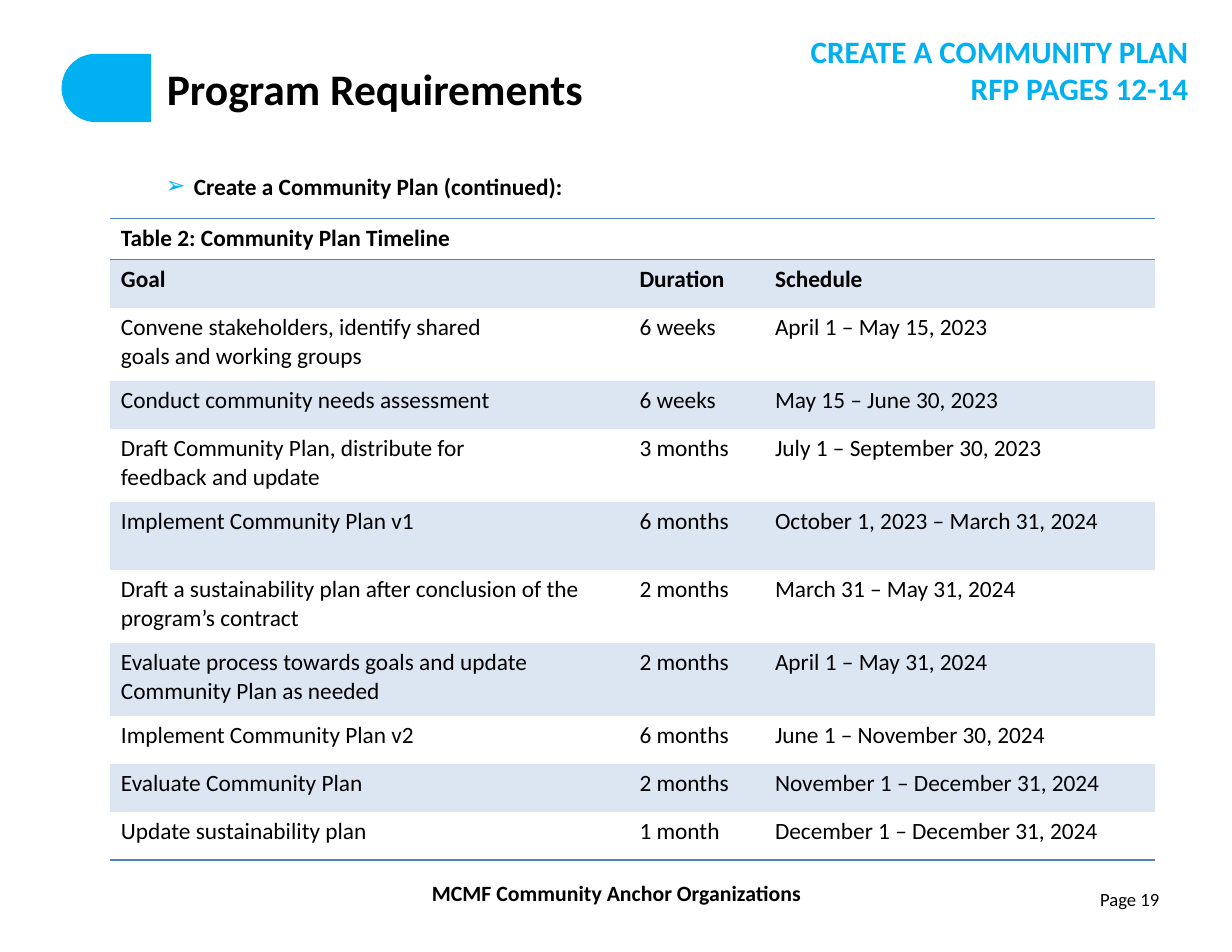
import pptx
import pptx.util
import pptx.dml.color
import pptx.enum.shapes
import pptx.enum.text
import pptx.oxml
from lxml import etree

Inches = pptx.util.Inches
Align = pptx.enum.text.PP_ALIGN
Anchor = pptx.enum.text.MSO_ANCHOR
ShapeKind = pptx.enum.shapes.MSO_SHAPE

FONT = "Calibri"
BLACK = "000000"
WHITE = "FFFFFF"
CYAN = "00B0F0"
RULE = "4F81BD"
BAND = "DCE6F2"
NO_STYLE = "{2D5ABB26-0587-4C30-8999-92F81FD0307C}"

CAPTION = "Table 2: Community Plan Timeline"
COLUMN_WIDTHS = [4.63, 1.21, 3.49]
CAPTION_HEIGHT = 0.37
TIMELINE = [
    (0.43, "Goal", "Duration", "Schedule"),
    (0.65, "Convene stakeholders, identify shared\ngoals and working groups", "6 weeks", "April 1 – May 15, 2023"),
    (0.43, "Conduct community needs assessment", "6 weeks", "May 15 – June 30, 2023"),
    (0.65, "Draft Community Plan, distribute for\nfeedback and update", "3 months", "July 1 – September 30, 2023"),
    (0.61, "Implement Community Plan v1", "6 months", "October 1, 2023 – March 31, 2024"),
    (0.65, "Draft a sustainability plan after conclusion of the program’s contract", "2 months", "March 31 – May 31, 2024"),
    (0.65, "Evaluate process towards goals and update Community Plan as needed", "2 months", "April 1 – May 31, 2024"),
    (0.43, "Implement Community Plan v2", "6 months", "June 1 – November 30, 2024"),
    (0.43, "Evaluate Community Plan", "2 months", "November 1 – December 31, 2024"),
    (0.43, "Update sustainability plan", "1 month", "December 1 – December 31, 2024"),
]


def rgb(color):
    return pptx.dml.color.RGBColor.from_string(color)


def write_text(frame, text, size, color=BLACK, bold=False, align=Align.LEFT):
    frame.text = text
    for para in frame.paragraphs:
        para.alignment = align
        for span in para.runs:
            span.font.name = FONT
            span.font.size = pptx.util.Pt(size)
            span.font.bold = bold
            span.font.color.rgb = rgb(color)


def place(shape, left, top, width, height):
    shape.left, shape.top = Inches(left), Inches(top)
    shape.width, shape.height = Inches(width), Inches(height)


def add_block(page, kind, bounds, color):
    block = page.shapes.add_shape(kind, *map(Inches, bounds))
    block.shadow.inherit = False
    block.fill.solid()
    block.fill.fore_color.rgb = rgb(color)
    block.line.fill.background()
    return block


def add_label(page, bounds, text, size, color, bold, align):
    box = page.shapes.add_textbox(*map(Inches, bounds))
    box.text_frame.word_wrap = True
    write_text(box.text_frame, text, size, color, bold, align)


def fill_placeholder(holder, bounds, text, size):
    place(holder, *bounds)
    frame = holder.text_frame
    frame.auto_size = pptx.enum.text.MSO_AUTO_SIZE.NONE
    frame.vertical_anchor = Anchor.MIDDLE
    frame.margin_left = frame.margin_right = Inches(0.11)
    frame.margin_top = frame.margin_bottom = Inches(0.06)
    write_text(frame, text, size, bold=True)
    frame.paragraphs[0].space_before = pptx.util.Pt(0)


def add_bullet(para, mark, color, indent):
    properties = para._p.get_or_add_pPr()
    properties.set("marL", str(Inches(indent)))
    properties.set("indent", str(-Inches(indent)))
    bullet_color = etree.SubElement(properties, pptx.oxml.ns.qn("a:buClr"))
    etree.SubElement(bullet_color, pptx.oxml.ns.qn("a:srgbClr"), val=color)
    etree.SubElement(properties, pptx.oxml.ns.qn("a:buChar"), char=mark)


def add_border(cell, side):
    qn = pptx.oxml.ns.qn
    line = etree.SubElement(cell._tc.get_or_add_tcPr(), qn("a:" + side), w=str(pptx.util.Pt(1)))
    fill = etree.SubElement(line, qn("a:solidFill"))
    etree.SubElement(fill, qn("a:srgbClr"), val=RULE)


def format_cell(cell, text, bold, sides, color):
    write_text(cell.text_frame, text, 15, bold=bold)
    cell.margin_left = cell.margin_right = Inches(0.1)
    cell.margin_top = cell.margin_bottom = Inches(0.05)
    for side in sides:
        add_border(cell, side)
    if color:
        cell.fill.solid()
        cell.fill.fore_color.rgb = rgb(color)
    else:
        cell.fill.background()


def add_timeline(page, left, top):
    heights = [CAPTION_HEIGHT] + [row[0] for row in TIMELINE]
    frame = page.shapes.add_table(
        len(heights), len(COLUMN_WIDTHS), Inches(left), Inches(top),
        Inches(sum(COLUMN_WIDTHS)), Inches(sum(heights)))
    table = frame.table
    table.first_row = table.horz_banding = False
    table._tbl.tblPr.find(pptx.oxml.ns.qn("a:tableStyleId")).text = NO_STYLE
    for column, width in zip(table.columns, COLUMN_WIDTHS):
        column.width = Inches(width)
    for row, height in zip(table.rows, heights):
        row.height = Inches(height)

    table.cell(0, 0).merge(table.cell(0, len(COLUMN_WIDTHS) - 1))
    for index in range(len(COLUMN_WIDTHS)):
        format_cell(table.cell(0, index), "" if index else CAPTION, True, ["lnT", "lnB"], None)
    for number, (_, *texts) in enumerate(TIMELINE, 1):
        sides = ["lnB"] if number == len(TIMELINE) else []
        color = BAND if number % 2 else None
        for index, text in enumerate(texts):
            format_cell(table.cell(number, index), text, number == 1, sides, color)


def main():
    deck = pptx.Presentation()
    deck.slide_width, deck.slide_height = Inches(11), Inches(8.5)
    page = deck.slides.add_slide(deck.slide_layouts[1])
    title, body = page.placeholders

    fill_placeholder(title, (1.38, 0.51, 9.07, 0.55), "Program Requirements", 28)
    fill_placeholder(body, (1.37, 1.18, 8.47, 0.96), "Create a Community Plan (continued):", 15)
    add_bullet(body.text_frame.paragraphs[0], "➢", CYAN, 0.25)

    pill = add_block(page, ShapeKind.ROUNDED_RECTANGLE, (0.55, 0.48, 8.44, 0.61), CYAN)
    pill.adjustments[0] = 0.5
    mask = add_block(page, ShapeKind.RECTANGLE, (1.36, 0.41, 7.67, 0.86), WHITE)
    mask.line.color.rgb = rgb(WHITE)
    mask.line.width = pptx.util.Pt(2)
    for shape in (mask, pill):
        page.shapes._spTree.insert(2, shape._element)

    add_timeline(page, 0.98, 1.95)
    add_label(page, (6.2, 0.24, 4.51, 0.77), "CREATE A COMMUNITY PLAN\nRFP PAGES 12-14",
              20, CYAN, True, Align.RIGHT)
    add_label(page, (2.66, 7.81, 5.69, 0.34), "MCMF Community Anchor Organizations",
              14, BLACK, True, Align.CENTER)
    add_label(page, (7.88, 7.88, 2.57, 0.45), "Page 19", 12, BLACK, False, Align.RIGHT)
    deck.save("out.pptx")


if __name__ == "__main__":
    main()
